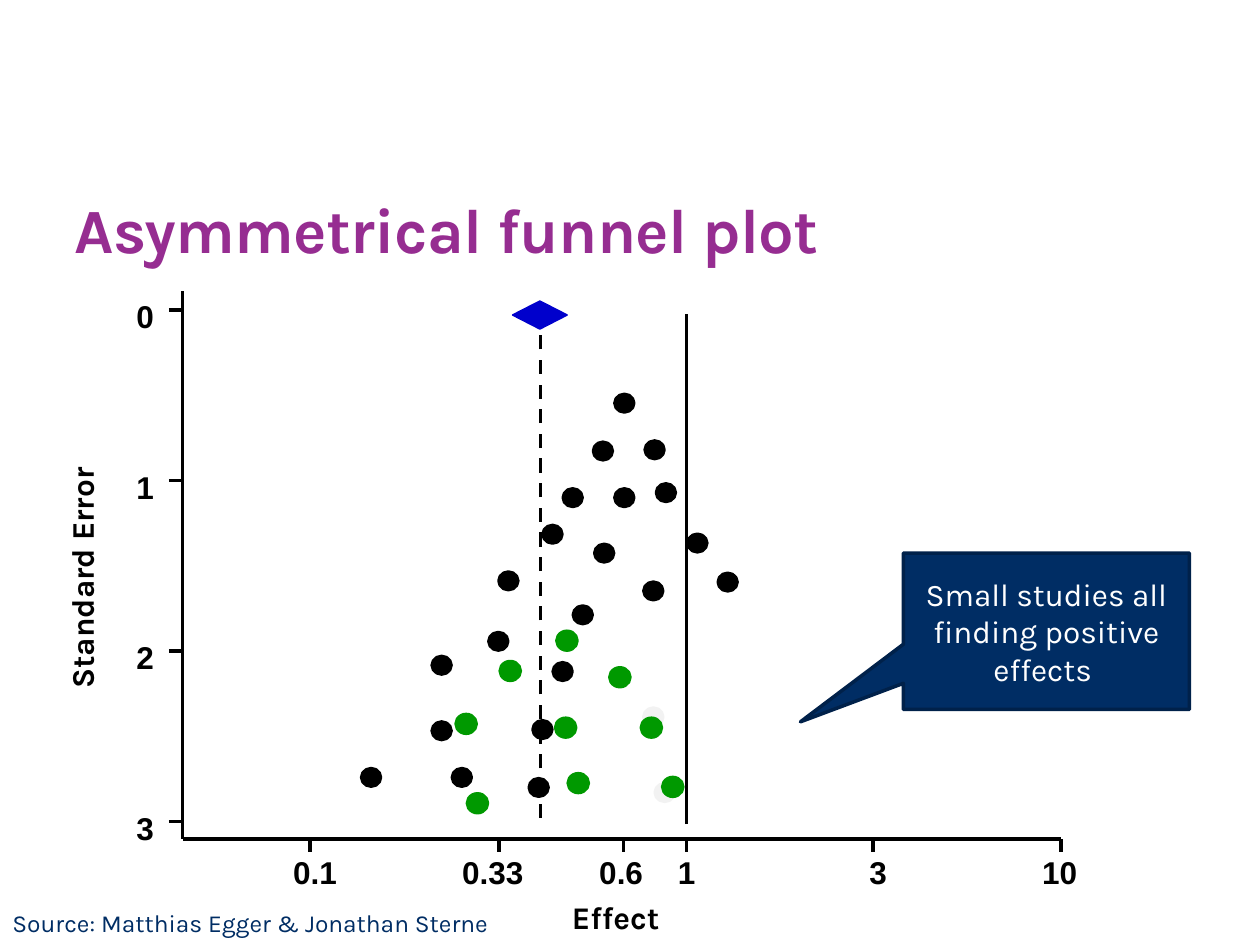
"""Build a slide with an asymmetrical funnel plot and a callout."""
from dataclasses import dataclass
from typing import NamedTuple

from lxml import etree
from pptx import Presentation
from pptx.dml.color import RGBColor
from pptx.enum.dml import MSO_LINE
from pptx.enum.shapes import MSO_CONNECTOR, MSO_SHAPE
from pptx.enum.text import MSO_ANCHOR, PP_ALIGN
from pptx.oxml.ns import qn
from pptx.util import Inches, Pt

STRAIGHT = MSO_CONNECTOR.STRAIGHT
OVAL, DIAMOND, CALLOUT = MSO_SHAPE.OVAL, MSO_SHAPE.DIAMOND, MSO_SHAPE.RECTANGULAR_CALLOUT
LEFT, CENTER, RIGHT = PP_ALIGN.LEFT, PP_ALIGN.CENTER, PP_ALIGN.RIGHT
TOP, MIDDLE, BOTTOM = MSO_ANCHOR.TOP, MSO_ANCHOR.MIDDLE, MSO_ANCHOR.BOTTOM
DASH = MSO_LINE.DASH


@dataclass(frozen=True)
class Theme:
    """Colours, fonts and type sizes."""
    ink: str = "000000"
    white: str = "FFFFFF"
    purple: str = "962D91"
    navy: str = "002D64"
    navy_edge: str = "00214A"
    blue: str = "0000CC"
    green: str = "009900"
    pale: str = "F2F2F2"
    text_font: str = "Karla"
    tick_font: str = "Arial"
    title_size: int = 36
    label_size: int = 18
    source_size: int = 14


THEME = Theme()


class Area(NamedTuple):
    """A place on the page in inches."""
    left: float
    top: float
    width: float
    height: float

    def lengths(self) -> list:
        """Return the four values as lengths."""
        return [Inches(value) for value in self]


class Tick(NamedTuple):
    """A mark on the effect axis and the centre of its label."""
    label: str
    position: float
    label_center: float


@dataclass(frozen=True)
class Label:
    """A piece of text and its look."""
    text: str
    area: Area
    size: int = THEME.label_size
    color: str = THEME.ink
    font: str = THEME.text_font
    bold: bool = True
    align: PP_ALIGN = LEFT
    anchor: MSO_ANCHOR = TOP
    wrap: bool = False
    rotation: float = 0
    inset: bool = True
    spacing: int = 0


@dataclass(frozen=True)
class Studies:
    """A group of equal dots, given by their top left corners."""
    color: str
    width: float
    height: float
    corners: tuple


AXIS_LEFT, AXIS_RIGHT, AXIS_TOP, AXIS_BOTTOM = 1.45, 8.42, 2.31, 6.66
ERROR_ZERO, ERROR_STEP = 2.46, 1.353
EFFECT_TICKS = (
    Tick("0.1", 2.46, 2.5), Tick("0.33", 3.96, 3.91), Tick("0.6", 4.95, 4.93),
    Tick("1", 5.45, 5.45), Tick("3", 6.93, 6.97), Tick("10", 8.42, 8.41),
)
STUDY_GROUPS = (
    Studies(THEME.pale, 0.15, 0.14, ((5.11, 5.62), (5.2, 6.22))),
    Studies(THEME.ink, 0.15, 0.14, (
        (4.88, 3.13), (4.71, 3.51), (5.12, 3.5), (4.47, 3.88), (4.88, 3.88),
        (5.21, 3.84), (4.31, 4.17), (5.46, 4.24), (4.72, 4.32), (3.96, 4.54),
        (5.11, 4.62), (5.7, 4.55), (4.55, 4.81), (3.88, 5.02), (3.43, 5.21),
        (4.39, 5.26), (3.43, 5.73), (4.23, 5.72), (2.87, 6.1), (3.59, 6.1),
        (4.2, 6.18),
    )),
    Studies(THEME.green, 0.16, 0.15, (
        (4.42, 5.01), (3.97, 5.25), (4.84, 5.3), (3.62, 5.67), (4.41, 5.7),
        (5.09, 5.7), (4.51, 6.14), (5.26, 6.17), (3.71, 6.3),
    )),
)
LABELS = (
    Label(" Asymmetrical funnel plot", Area(0.47, 1.42, 6.69, 0.69), THEME.title_size,
          THEME.purple, anchor=BOTTOM, wrap=True, inset=False, spacing=-40),
    Label("Effect", Area(4.44, 7.08, 0.99, 0.51)),
    Label("Standard Error", Area(-0.42, 4.19, 2.24, 0.51), rotation=270),
    Label("Source: Matthias Egger & Jonathan Sterne", Area(0, 7.16, 4.2, 0.34),
          THEME.source_size, THEME.navy, bold=False, wrap=True),
)
CALLOUT_LABEL = Label("Small studies all finding positive effects ",
                      Area(7.17, 4.39, 2.27, 1.24), color=THEME.white, bold=False,
                      align=CENTER, anchor=MIDDLE, wrap=True)


def write_text(box, label: Label) -> None:
    """Write a label into a box."""
    frame = box.text_frame
    frame.word_wrap = label.wrap
    frame.vertical_anchor = label.anchor
    if not label.inset:
        frame.margin_left = frame.margin_right = 0
        frame.margin_top = frame.margin_bottom = 0
    para = frame.paragraphs[0]
    para.alignment = label.align
    span = para.add_run()
    span.text = label.text
    span.font.name = label.font
    span.font.size = Pt(label.size)
    span.font.bold = label.bold
    span.font.color.rgb = RGBColor.from_string(label.color)
    if label.spacing:
        span._r.get_or_add_rPr().set("spc", str(label.spacing))


def add_label(page, label: Label) -> None:
    """Add a text box."""
    box = page.shapes.add_textbox(*label.area.lengths())
    box.rotation = label.rotation
    write_text(box, label)


def add_line(page, start: tuple, end: tuple, weight: float = 2, dash=None) -> None:
    """Add a straight black line."""
    line = page.shapes.add_connector(
        STRAIGHT, *(Inches(value) for value in (*start, *end)))
    line.line.color.rgb = RGBColor.from_string(THEME.ink)
    line.line.width = Pt(weight)
    if dash is not None:
        line.line.dash_style = dash
    etree.SubElement(line._element.spPr, qn("a:effectLst"))


def add_figure(page, kind, area: Area, fill: str, edge: str, weight: float = 2):
    """Add a filled and outlined preset shape."""
    figure = page.shapes.add_shape(kind, *area.lengths())
    figure.shadow.inherit = False
    figure.fill.solid()
    figure.fill.fore_color.rgb = RGBColor.from_string(fill)
    figure.line.color.rgb = RGBColor.from_string(edge)
    figure.line.width = Pt(weight)
    return figure


def add_axes(page) -> None:
    """Draw both axes with ticks and tick labels."""
    add_line(page, (AXIS_LEFT, AXIS_BOTTOM), (AXIS_RIGHT, AXIS_BOTTOM))
    add_line(page, (AXIS_LEFT, AXIS_TOP), (AXIS_LEFT, AXIS_BOTTOM))
    for error in range(4):
        height = ERROR_ZERO + error * ERROR_STEP
        add_line(page, (AXIS_LEFT - 0.11, height), (AXIS_LEFT, height))
        add_label(page, Label(str(error), Area(0.92, height - 0.15, 0.4, 0.47),
                              font=THEME.tick_font, align=RIGHT))
    for tick in EFFECT_TICKS:
        add_line(page, (tick.position, AXIS_BOTTOM), (tick.position, AXIS_BOTTOM + 0.1))
        width = 0.3 + 0.12 * len(tick.label)
        add_label(page, Label(tick.label, Area(tick.label_center - width / 2, 6.72, width, 0.47),
                              font=THEME.tick_font, align=CENTER))


def main() -> None:
    """Build and save the deck."""
    deck = Presentation()
    deck.slide_width, deck.slide_height = Inches(10), Inches(7.5)
    page = deck.slides.add_slide(deck.slide_layouts[6])
    add_axes(page)
    add_line(page, (4.29, 6.49), (4.29, 2.43), dash=DASH)
    add_line(page, (5.45, 6.54), (5.45, 2.49), weight=1.5)
    add_figure(page, DIAMOND, Area(4.07, 2.39, 0.43, 0.22), THEME.blue, THEME.blue, 1)
    for group in STUDY_GROUPS:
        for left, top in group.corners:
            add_figure(page, OVAL, Area(left, top, group.width, group.height),
                       group.color, group.color)
    for label in LABELS:
        add_label(page, label)
    callout = add_figure(page, CALLOUT, CALLOUT_LABEL.area, THEME.navy, THEME.navy_edge)
    callout.adjustments[0], callout.adjustments[1] = -0.86, 0.58
    write_text(callout, CALLOUT_LABEL)
    deck.save("out.pptx")


if __name__ == "__main__":
    main()
